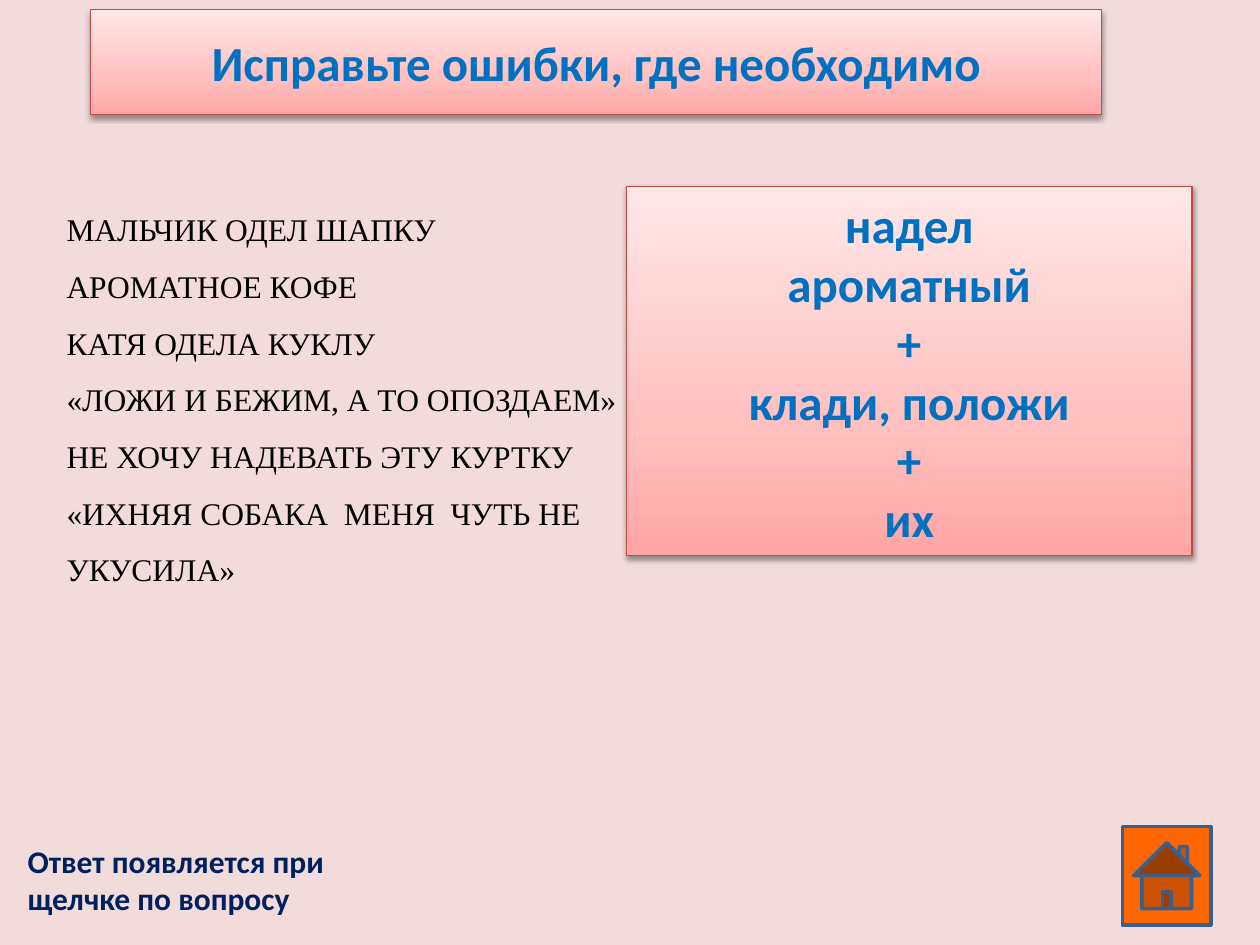
import dataclasses

import pptx
import pptx.dml.color
import pptx.enum.shapes
import pptx.enum.text
import pptx.oxml
import pptx.oxml.ns
import pptx.util

Inches = pptx.util.Inches
Pt = pptx.util.Pt
Kind = pptx.enum.shapes.MSO_SHAPE
Align = pptx.enum.text.PP_ALIGN
Anchor = pptx.enum.text.MSO_ANCHOR
Fit = pptx.enum.text.MSO_AUTO_SIZE


@dataclasses.dataclass(frozen=True)
class Theme:
    back: str = "F2DCDB"
    edge: str = "BF4C48"
    blue: str = "0070C0"
    navy: str = "002060"
    ink: str = "000000"
    home: str = "FF6600"
    rim: str = "3A5F8C"
    fade: tuple = ((0, "FFA6A5"), (35, "FFC0BF"), (100, "FFE7E7"))
    big: int = 28
    small: int = 18
    sans: str = "Calibri"
    serif: str = "Times New Roman"


THEME = Theme()

TITLE = "Исправьте ошибки, где необходимо"
ERRORS = [
    "МАЛЬЧИК ОДЕЛ ШАПКУ",
    "АРОМАТНОЕ КОФЕ",
    "КАТЯ ОДЕЛА КУКЛУ",
    "«ЛОЖИ И БЕЖИМ, А ТО ОПОЗДАЕМ»",
    "НЕ ХОЧУ НАДЕВАТЬ ЭТУ КУРТКУ",
    "«ИХНЯЯ СОБАКА  МЕНЯ  ЧУТЬ НЕ УКУСИЛА»",
]
ANSWERS = ["надел", "ароматный", "+", "клади, положи", "+", "их"]
HINT = "Ответ появляется при щелчке по вопросу"


def rgb(code):
    return pptx.dml.color.RGBColor.from_string(code)


def place(shape, box):
    shape.left, shape.top, shape.width, shape.height = map(Inches, box)


def write(shape, lines, size=THEME.small, font=THEME.sans, color=THEME.ink,
          bold=False, align=Align.LEFT, anchor=Anchor.TOP, space=1.0):
    frame = shape.text_frame
    frame.word_wrap = True
    frame.auto_size = Fit.SHAPE_TO_FIT_TEXT
    frame.vertical_anchor = anchor
    for num, line in enumerate(lines):
        para = frame.add_paragraph() if num else frame.paragraphs[0]
        para.alignment = align
        para.line_spacing = space
        run = para.add_run()
        run.text = line
        run.font.size = Pt(size)
        run.font.name = font
        run.font.bold = bold
        run.font.color.rgb = rgb(color)


def node(body):
    names = pptx.oxml.ns.nsdecls("a")
    return pptx.oxml.parse_xml(body.replace(">", f" {names}>", 1))


def panel(shape, box, lines):
    place(shape, box)
    shape.fill.gradient()
    shape.fill.gradient_angle = 90
    stops = "".join(
        f'<a:gs pos="{pos * 1000}"><a:srgbClr val="{code}"/></a:gs>'
        for pos, code in THEME.fade)
    props = shape.element.spPr
    grad = props.find(pptx.oxml.ns.qn("a:gradFill"))
    old = grad.find(pptx.oxml.ns.qn("a:gsLst"))
    grad.replace(old, node(f"<a:gsLst>{stops}</a:gsLst>"))
    shape.line.color.rgb = rgb(THEME.edge)
    shape.line.width = Pt(0.75)
    shape.shadow.inherit = False
    props.find(pptx.oxml.ns.qn("a:effectLst")).append(node(
        '<a:outerShdw blurRad="40000" dist="20000" dir="5400000" '
        'rotWithShape="0"><a:srgbClr val="000000"><a:alpha val="38000"/>'
        '</a:srgbClr></a:outerShdw>'))
    write(shape, lines, size=THEME.big, color=THEME.blue, bold=True,
          align=Align.CENTER, anchor=Anchor.MIDDLE)


def label(slide, box, lines, **style):
    shape = slide.shapes.add_textbox(*map(Inches, box))
    write(shape, lines, **style)


def button(slide, box):
    shape = slide.shapes.add_shape(Kind.ACTION_BUTTON_HOME, *map(Inches, box))
    shape.fill.solid()
    shape.fill.fore_color.rgb = rgb(THEME.home)
    shape.line.color.rgb = rgb(THEME.rim)
    shape.line.width = Pt(2)
    shape.shadow.inherit = False


def main():
    deck = pptx.Presentation()
    deck.slide_width, deck.slide_height = Inches(10), Inches(7.5)
    slide = deck.slides.add_slide(deck.slide_layouts.get_by_name("Title Only"))
    slide.background.fill.solid()
    slide.background.fill.fore_color.rgb = rgb(THEME.back)

    panel(slide.shapes.title, (0.72, 0.21, 8.02, 0.57), [TITLE])
    box = (4.97, 1.48, 4.49, 2.93)
    card = slide.shapes.add_shape(Kind.RECTANGLE, *map(Inches, box))
    panel(card, box, ANSWERS)
    label(slide, (0.12, 6.63, 2.68, 0.71), [HINT], color=THEME.navy, bold=True)
    button(slide, (8.91, 6.56, 0.7, 0.78))
    label(slide, (0.43, 1.47, 5, 3.23), ERRORS, font=THEME.serif, space=1.5)
    deck.save("out.pptx")


if __name__ == "__main__":
    main()
